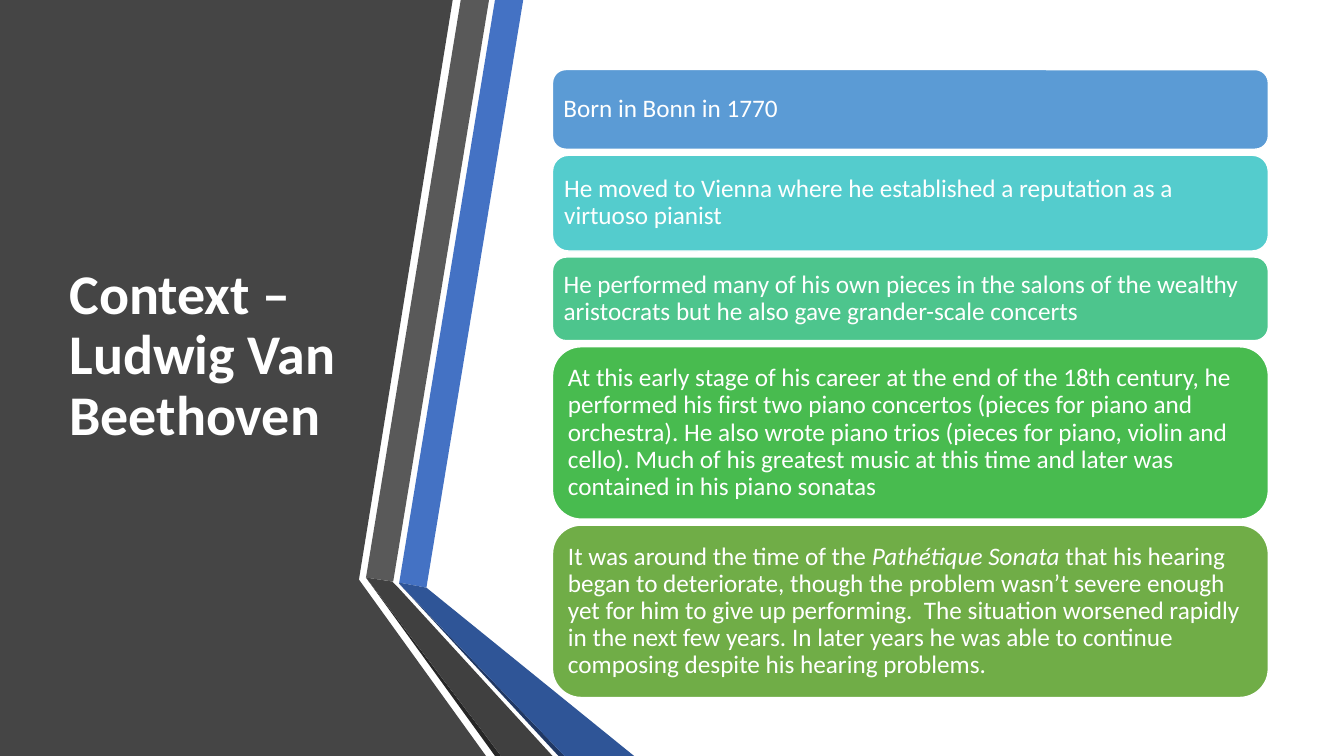
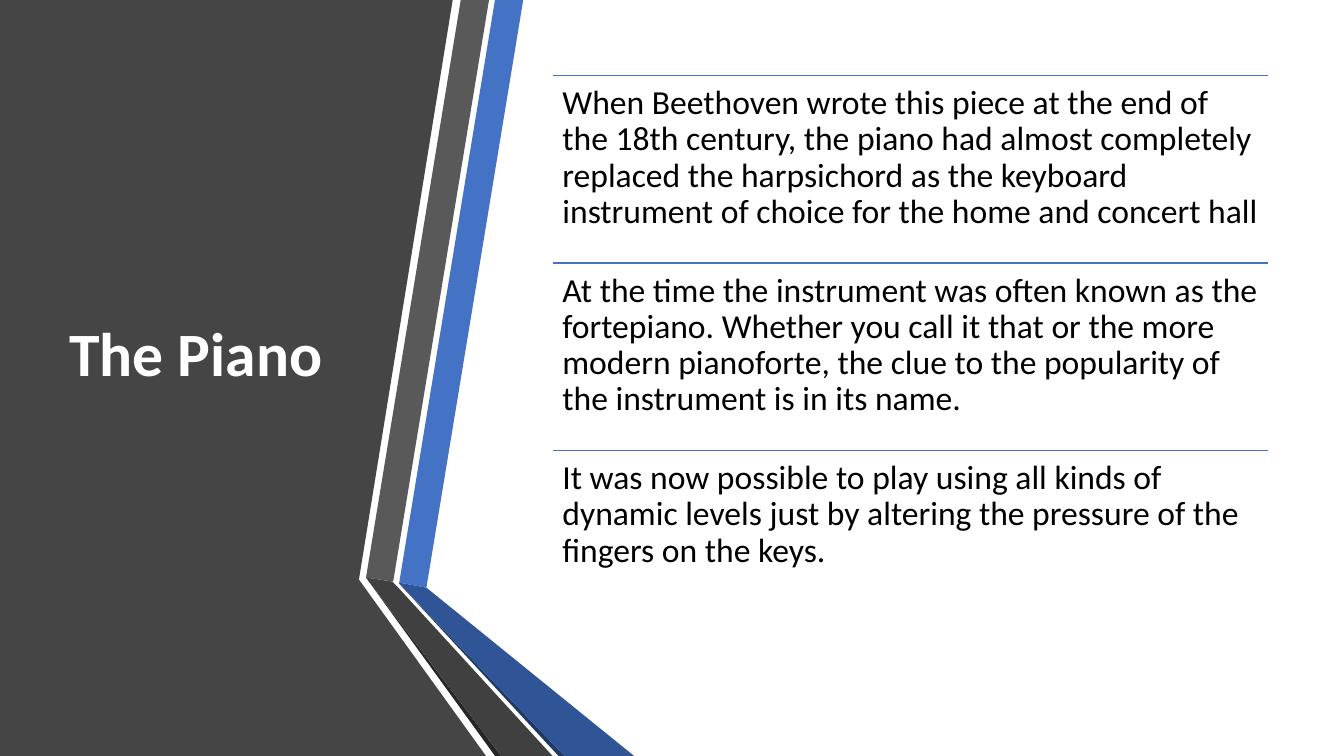
from lxml import etree
from pptx import Presentation
from pptx.dml.color import RGBColor
from pptx.enum import shapes, text
from pptx.oxml import ns
from pptx.util import Inches, Pt

WHITE = RGBColor(0xFF, 0xFF, 0xFF)
BLACK = RGBColor(0x00, 0x00, 0x00)
PANEL = RGBColor(0x45, 0x45, 0x45)
GRAY = RGBColor(0x59, 0x59, 0x59)
GRAY_FOLD = RGBColor(0x40, 0x40, 0x40)
GRAY_EDGE = RGBColor(0x26, 0x26, 0x26)
BLUE = RGBColor(0x44, 0x72, 0xC4)
BLUE_FOLD = RGBColor(0x2F, 0x55, 0x97)
BLUE_EDGE = RGBColor(0x20, 0x38, 0x64)
SKY = RGBColor(0x5B, 0x9B, 0xD5)
TURQUOISE = RGBColor(0x54, 0xCC, 0xCD)
SEA_GREEN = RGBColor(0x4D, 0xC5, 0x8D)
GREEN = RGBColor(0x48, 0xBB, 0x4F)
OLIVE = RGBColor(0x70, 0xAD, 0x47)

# Outlines of the side panel and its folded ribbons, back to front
SIDE_ART = [
    (PANEL, [(0, 0), (4.49, 0), (3.56, 5.75), (4.82, 7.5), (0, 7.5)]),
    (BLUE, [(3.96, 5.78), (4.23, 5.83), (5.19, 0), (4.91, 0)]),
    (GRAY, [(4.85, 0), (4.57, 0), (3.63, 5.73), (3.9, 5.77)]),
    (GRAY_EDGE, [(3.63, 5.73), (4.91, 7.5), (4.97, 7.5)]),
    (BLUE_EDGE, [(3.96, 5.79), (5.54, 7.5), (5.6, 7.5)]),
    (BLUE_FOLD, [(3.96, 5.79), (5.6, 7.5), (6.29, 7.5), (4.23, 5.83), (3.96, 5.78)]),
    (GRAY_FOLD, [(5.48, 7.5), (3.95, 5.83), (3.89, 5.77), (3.63, 5.73), (4.97, 7.5)]),
]

BODY_LEFT, BODY_WIDTH = 5.48, 7.1
BOX_TOP, BOX_GAP = 0.69, 0.06
RULE_TOP, RULE_STEP = 0.75, 1.86

# Fill, height and text runs; every second run is italic
LIFE_BOXES = [
    (SKY, 0.79, ["Born in Bonn in 1770"]),
    (TURQUOISE, 0.95, ["He moved to Vienna where he established a reputation as a "
                       "virtuoso pianist"]),
    (SEA_GREEN, 0.83, ["He performed many of his own pieces in the salons of the wealthy "
                       "aristocrats but he also gave grander-scale concerts"]),
    (GREEN, 1.71, ["At this early stage of his career at the end of the 18th century, he "
                   "performed his first two piano concertos (pieces for piano and "
                   "orchestra). He also wrote piano trios (pieces for piano, violin and "
                   "cello). Much of his greatest music at this time and later was "
                   "contained in his piano sonatas"]),
    (OLIVE, 1.71, ["It was around the time of the ", "Pathétique Sonata",
                   " that his hearing began to deteriorate, though the problem wasn’t "
                   "severe enough yet for him to give up performing.  The situation "
                   "worsened rapidly in the next few years. In later years he was able "
                   "to continue composing despite his hearing problems."]),
]

PIANO_FACTS = [
    "When Beethoven wrote this piece at the end of the 18th century, the piano had almost "
    "completely replaced the harpsichord as the keyboard instrument of choice for the home "
    "and concert hall",
    "At the time the instrument was often known as the fortepiano. Whether you call it that "
    "or the more modern pianoforte, the clue to the popularity of the instrument is in its "
    "name.",
    "It was now possible to play using all kinds of dynamic levels just by altering the "
    "pressure of the fingers on the keys.",
]


class Deck:
    font = "Calibri"

    def __init__(self):
        self.prs = Presentation()
        self.prs.slide_width, self.prs.slide_height = Inches(13.33), Inches(7.5)
        self.shapes = None

    def new_slide(self, title, size):
        """Start a slide with the side art and a title on the dark panel."""
        self.shapes = self.prs.slides.add_slide(self.prs.slide_layouts[6]).shapes
        for color, points in SIDE_ART:
            self.polygon(color, points)
        self.text_box(0.59, 0.75, 3.04, 5.58, title, size, WHITE,
                      bold=True, anchor=text.MSO_ANCHOR.MIDDLE)

    def polygon(self, color, points):
        (x, y), *rest = [(Inches(px), Inches(py)) for px, py in points]
        builder = self.shapes.build_freeform(x, y)
        builder.add_line_segments(rest, close=True)
        sp = builder.convert_to_shape()
        self.paint(sp, color)
        sp.line.fill.background()

    def paint(self, sp, color):
        sp.shadow.inherit = False
        sp.fill.solid()
        sp.fill.fore_color.rgb = color

    def set_text(self, sp, runs, size, color, inset, anchor, bold=False):
        tf = sp.text_frame
        tf.word_wrap = True
        tf.vertical_anchor = anchor
        tf.margin_left = tf.margin_right = Inches(inset)
        tf.margin_top = tf.margin_bottom = Inches(inset)
        p = tf.paragraphs[0]
        p.alignment = text.PP_ALIGN.LEFT
        p.line_spacing = 0.9
        for i, words in enumerate(runs):
            r = p.add_run()
            r.text = words
            r.font.name, r.font.size = self.font, Pt(size)
            r.font.color.rgb = color
            r.font.bold, r.font.italic = bold, i % 2 == 1

    def text_box(self, x, y, w, h, words, size, color, bold=False,
                 anchor=text.MSO_ANCHOR.TOP):
        sp = self.shapes.add_textbox(Inches(x), Inches(y), Inches(w), Inches(h))
        self.set_text(sp, [words], size, color, 0.1, anchor, bold)

    def rounded_box(self, y, h, color, runs):
        sp = self.shapes.add_shape(shapes.MSO_SHAPE.ROUNDED_RECTANGLE, Inches(BODY_LEFT),
                                   Inches(y), Inches(BODY_WIDTH), Inches(h))
        self.paint(sp, color)
        sp.line.color.rgb, sp.line.width = WHITE, Pt(1)
        self.set_text(sp, runs, 18, WHITE, 0.07, text.MSO_ANCHOR.MIDDLE)

    def rule(self, y):
        line = self.shapes.add_connector(
            shapes.MSO_CONNECTOR.STRAIGHT, Inches(BODY_LEFT), Inches(y),
            Inches(BODY_LEFT + BODY_WIDTH), Inches(y))
        line.line.color.rgb, line.line.width = BLUE, Pt(1)
        etree.SubElement(line._element.spPr, ns.qn("a:effectLst"))


def main():
    deck = Deck()

    deck.new_slide("Context – Ludwig Van Beethoven", 40)
    y = BOX_TOP
    for color, height, runs in LIFE_BOXES:
        deck.rounded_box(y, height, color, runs)
        y += height + BOX_GAP

    deck.new_slide("The Piano", 44)
    for i, fact in enumerate(PIANO_FACTS):
        y = RULE_TOP + i * RULE_STEP
        deck.rule(y)
        deck.text_box(BODY_LEFT, y, BODY_WIDTH, RULE_STEP, fact, 24, BLACK)

    deck.prs.save("out.pptx")


if __name__ == "__main__":
    main()
